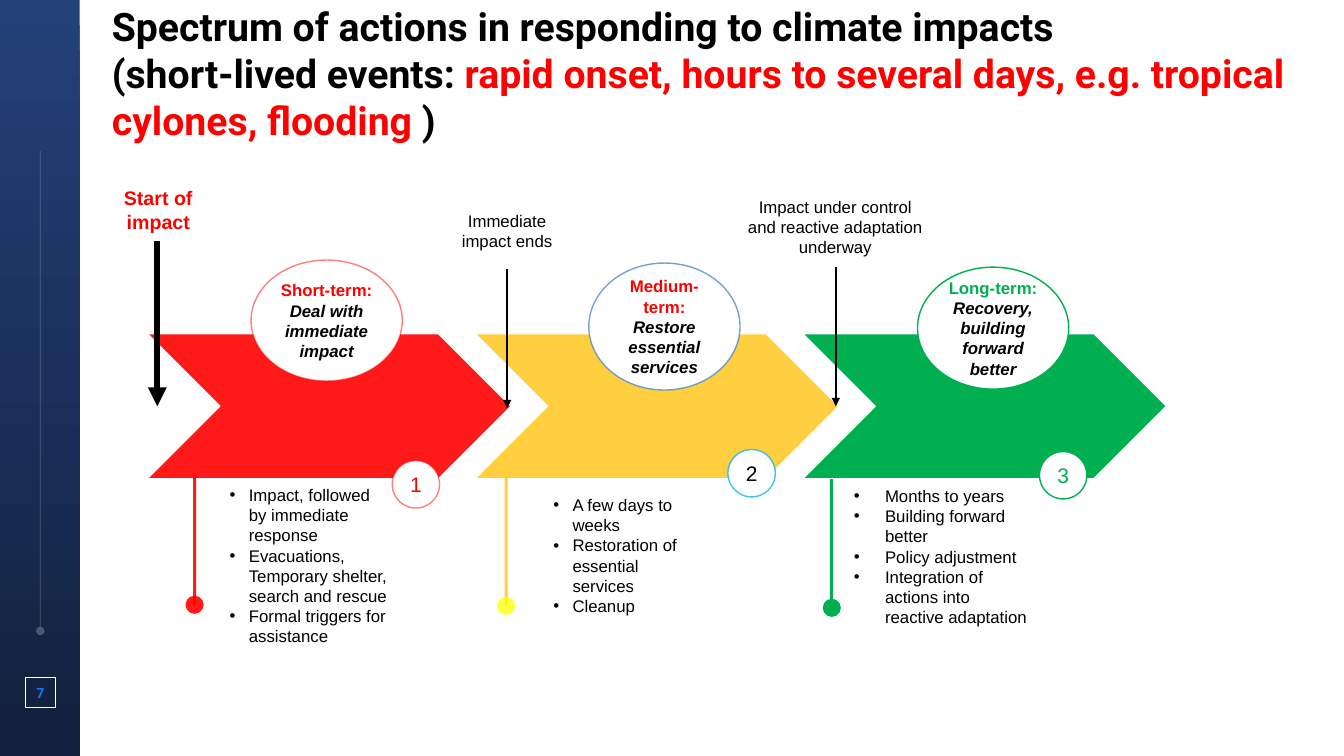
from lxml.etree import SubElement
from pptx import Presentation
from pptx.dml.color import RGBColor
from pptx.enum.shapes import MSO_CONNECTOR as Connector, MSO_SHAPE as Shape
from pptx.enum.text import MSO_ANCHOR as Anchor, PP_ALIGN as Align
from pptx.oxml.ns import qn
from pptx.util import Inches, Pt

BLACK, WHITE, RED, GREEN = "000000", "FFFFFF", "FF0000", "00B050"
AMBER, YELLOW = "FFC000", "FFFF00"

TITLE = [
    ("Spectrum of actions in responding to climate impacts\n(short-lived events: ", BLACK),
    ("rapid onset, hours to several days, e.g. tropical cylones, flooding ", RED),
    (")", BLACK),
]
PAGE = "7"
MILESTONES = [
    dict(text="Start of impact", label=(1.11, 1.8, 0.92, 0.57), size=14, color=RED, bold=True,
         arrow=(1.56, 2.39, 4.03), weight=4.5),
    dict(text="Immediate impact ends", label=(4.46, 2.04, 1.14, 0.5), size=12, color=BLACK,
         bold=False, arrow=(5.03, 2.67, 4.05), weight=1),
    dict(text="Impact under control and reactive adaptation underway",
         label=(7.31, 1.9, 1.95, 0.71), size=12, color=BLACK, bold=False,
         arrow=(8.29, 2.65, 4.03), weight=1),
]
PHASES = [
    dict(term="Short-term: ", term_color=RED, goal="Deal with immediate impact",
         color=RED, alpha=90, dot=RED, ring=(RED, 50), number_color=RED,
         oval=(2.49, 2.58, 1.5, 1.2), badge=(3.89, 4.57), pin=(1.93, 4.72, 6.0),
         notes=(2.18, 4.76, 1.77, 1.72), indent=0.19,
         points=["Impact, followed by immediate response",
                 "Evacuations, Temporary shelter, search and rescue",
                 "Formal triggers for assistance"]),
    dict(term="Medium-term: ", term_color=RED, goal="Restore essential services",
         color=AMBER, alpha=75, dot=YELLOW, ring=("4385C7", 75), badge_ring="00B0F0",
         number_color=BLACK,
         oval=(5.84, 2.61, 1.5, 1.26), badge=(7.22, 4.46), pin=(5.02, 4.73, 6.01),
         notes=(5.39, 4.86, 1.54, 1.31), indent=0.19,
         points=["A few days to weeks", "Restoration of essential services", "Cleanup"]),
    dict(term="Long-term:\n", term_color=GREEN, goal="Recovery, building forward better",
         color=GREEN, alpha=100, dot=GREEN, ring=(GREEN, 100), number_color=GREEN,
         oval=(9.1, 2.65, 1.5, 1.21), badge=(10.31, 4.48), pin=(8.25, 4.75, 6.03),
         notes=(8.37, 4.77, 1.96, 1.51), indent=0.31,
         points=["Months to years", "Building forward better", "Policy adjustment",
                 "Integration of actions into reactive adaptation"]),
]
CHEVRON_LEFT, CHEVRON_STEP = 1.46, 3.25
DOT, BADGE = 0.18, 0.47


def rgb(value):
    return RGBColor.from_string(value)


def paint(fill, color, alpha=100):
    fill.solid()
    fill.fore_color.rgb = rgb(color)
    if alpha < 100:
        for node in fill._xPr.iter(qn("a:srgbClr")):
            SubElement(node, qn("a:alpha"), val=str(alpha * 1000))


def outline(line, color, weight, alpha=100):
    paint(line.fill, color, alpha)
    line.width = Pt(weight)


def add_part(kind, box, fill=None, alpha=100, edge=None, edge_alpha=100, weight=1):
    part = slide.shapes.add_shape(kind, *map(Inches, box))
    part.shadow.inherit = False
    if fill:
        paint(part.fill, fill, alpha)
    else:
        part.fill.background()
    if edge:
        outline(part.line, edge, weight, edge_alpha)
    else:
        part.line.fill.background()
    return part


def add_stem(x, top, bottom, color, weight, alpha=100, end=None):
    stem = slide.shapes.add_connector(
        Connector.STRAIGHT, Inches(x), Inches(top), Inches(x), Inches(bottom))
    outline(stem.line, color, weight, alpha)
    if end:
        SubElement(stem.line._ln, qn("a:tailEnd"), type=end)
    SubElement(stem._element.spPr, qn("a:effectLst"))


def style(run, size, color, font="Arial", bold=False, italic=False):
    run.font.size, run.font.name = Pt(size), font
    run.font.bold, run.font.italic = bold, italic
    run.font.color.rgb = rgb(color)


def write(paragraph, text, *args, **kwargs):
    for index, piece in enumerate(text.split("\n")):
        if index:
            paragraph.add_line_break()
        if piece:
            run = paragraph.add_run()
            run.text = piece
            style(run, *args, **kwargs)


def prepare(frame, inset=True, anchor=Anchor.TOP, align=Align.CENTER):
    frame.word_wrap = True
    frame.vertical_anchor = anchor
    if not inset:
        frame.margin_left = frame.margin_right = frame.margin_top = frame.margin_bottom = 0
    frame.paragraphs[0].alignment = align
    return frame.paragraphs[0]


def add_label(box, text, *args, inset=True, **kwargs):
    label = slide.shapes.add_textbox(*map(Inches, box))
    write(prepare(label.text_frame, inset), text, *args, **kwargs)


def add_points(box, points, indent):
    frame = slide.shapes.add_textbox(*map(Inches, box)).text_frame
    prepare(frame, align=Align.LEFT)
    frame.text = "\n".join(points)
    for paragraph in frame.paragraphs:
        properties = paragraph._p.get_or_add_pPr()
        properties.set("marL", str(Inches(indent)))
        properties.set("indent", str(-Inches(indent)))
        SubElement(properties, qn("a:buFont"), typeface="Arial")
        SubElement(properties, qn("a:buChar"), char="•")
        style(paragraph.runs[0], 12, BLACK)


deck = Presentation()
deck.slide_width, deck.slide_height = Inches(13.33), Inches(7.5)
slide = deck.slides.add_slide(deck.slide_layouts[5])

sidebar = add_part(Shape.RECTANGLE, (0, 0, 0.79, 7.5), WHITE)
sidebar.fill.gradient()
sidebar.fill.gradient_angle = 270
for stop, color in zip(sidebar.fill.gradient_stops, ("244179", "12203D")):
    stop.color.rgb = rgb(color)
add_stem(0.4, 1.5, 6.26, WHITE, 0.5, 24, "oval")
add_part(Shape.RECTANGLE, (0.25, 6.72, 0.3, 0.3), edge=WHITE, weight=0.5)
add_label((0.25, 6.79, 0.3, 0.17), PAGE, 10, "1775F9", "Roboto", True, inset=False)

title = slide.shapes.title
title.left, title.top, title.width, title.height = map(Inches, (1.11, 0.02, 11.86, 1.41))
heading = prepare(title.text_frame, False, Anchor.MIDDLE, Align.LEFT)
for text, color in TITLE:
    write(heading, text, 28, color, "Roboto", True)

for index, phase in enumerate(PHASES):
    add_part(Shape.CHEVRON, (CHEVRON_LEFT + index * CHEVRON_STEP, 3.31, 3.61, 1.44),
             phase["color"], phase["alpha"], WHITE)

for phase in PHASES:
    x, top, center = phase["pin"]
    add_stem(x, top, center, phase["color"], 2.25, phase["alpha"])
    add_part(Shape.OVAL, (x - DOT / 2, center - DOT / 2, DOT, DOT), phase["dot"], phase["alpha"])

for milestone in MILESTONES:
    add_label(milestone["label"], milestone["text"], milestone["size"], milestone["color"],
              bold=milestone["bold"])
    add_stem(*milestone["arrow"], BLACK, milestone["weight"], end="triangle")

for number, phase in enumerate(PHASES, 1):
    ring, ring_alpha = phase["ring"]
    oval = add_part(Shape.OVAL, phase["oval"], WHITE, edge=ring, edge_alpha=ring_alpha)
    caption = prepare(oval.text_frame, False, Anchor.MIDDLE)
    write(caption, phase["term"], 12, phase["term_color"], bold=True)
    write(caption, phase["goal"], 12, BLACK, bold=True, italic=True)
    badge = add_part(Shape.OVAL, (*phase["badge"], BADGE, BADGE), WHITE,
                     edge=phase.get("badge_ring", ring), edge_alpha=ring_alpha)
    write(prepare(badge.text_frame, False, Anchor.MIDDLE), str(number), 15, phase["number_color"])
    add_points(phase["notes"], phase["points"], phase["indent"])

deck.save("out.pptx")
